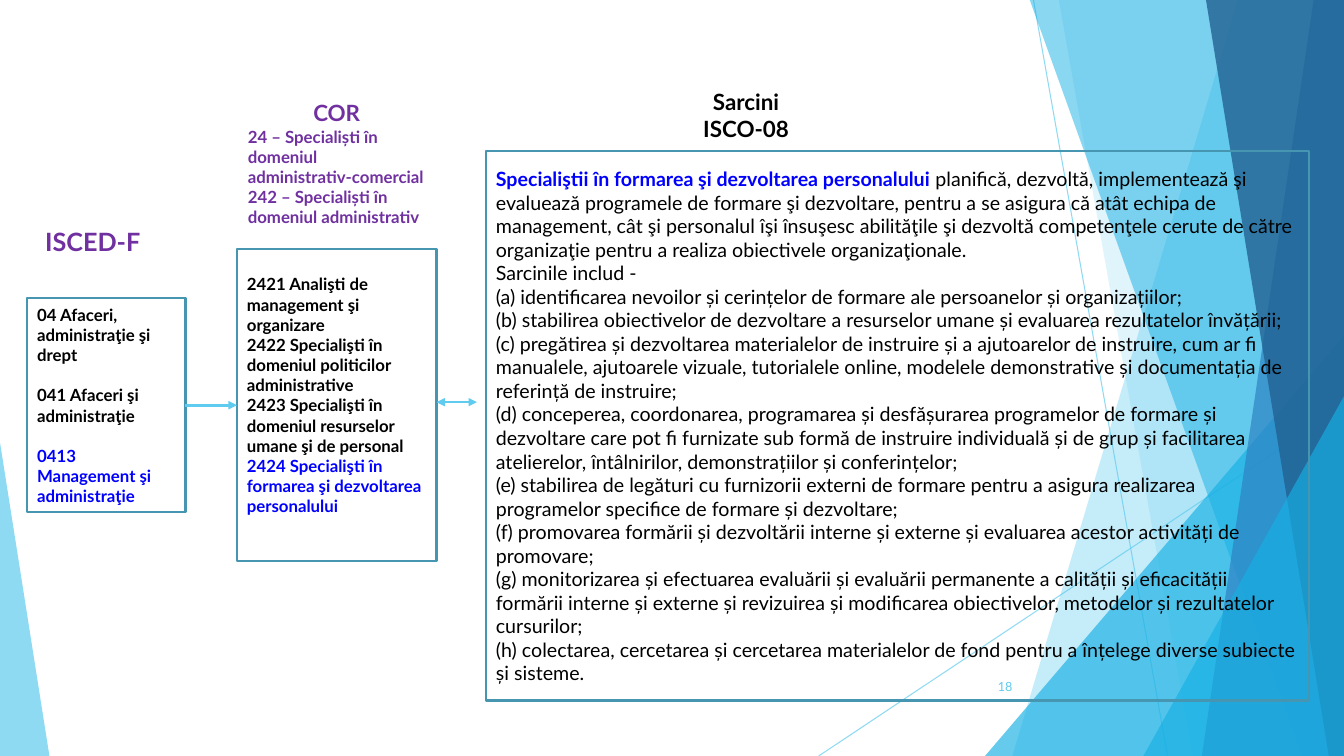
"""Build the slide that links ISCED-F fields, COR occupations and ISCO-08 tasks."""
from dataclasses import dataclass

from lxml import etree
from pptx import Presentation
from pptx import util as u
from pptx.dml.color import RGBColor
from pptx.enum import shapes, text
from pptx.oxml import ns

PX = u.Inches(1) // 100
WIDTH, HEIGHT = 1333, 750
RIGHT, MIDDLE, LEFT = 3, text.MSO_ANCHOR.MIDDLE, 1


@dataclass(frozen=True)
class Theme:
    """Colours, font and type sizes."""
    font: str = "Lato"
    ink: str = "000000"
    paper: str = "FFFFFF"
    purple: str = "7030A0"
    blue: str = "0000FF"
    border: str = "4696B1"
    sky: str = "5FCBEF"
    azure: str = "17B0E4"
    ocean: str = "2E83C3"
    navy: str = "226292"
    tiny: int = 9
    small: int = 12
    body: int = 14
    head: int = 16
    large: int = 18


THEME = Theme()

BANDS = [
    (1228, 1004, THEME.sky, 36),
    (1050, 1183, THEME.sky, 20),
    (1021, 1291, THEME.azure, 50),
    (1303, 1192, THEME.ocean, 70),
    (1196, 1318, THEME.navy, 80),
]
FIELDS = ["04 Afaceri, administraţie şi drept", "041 Afaceri şi administraţie"]
FIELD_CHOSEN = "0413 Management şi administraţie"
JOBS = [
    "2421 Analişti de management şi organizare",
    "2422 Specialişti în domeniul politicilor administrative",
    "2423 Specialişti în domeniul resurselor umane şi de personal",
]
JOB_CHOSEN = "2424 Specialişti în formarea şi dezvoltarea personalului"
COR_GROUPS = [
    "24 – Specialiști în domeniul administrativ-comercial",
    "242 – Specialiști în domeniul administrativ",
]
TASK_LEAD = "Specialiştii în formarea şi dezvoltarea personalului"
TASK_INTRO = (
    " planifică, dezvoltă, implementează şi evaluează programele de formare şi dezvoltare, "
    "pentru a se asigura că atât echipa de management, cât şi personalul îşi însuşesc "
    "abilităţile şi dezvoltă competenţele cerute de către organizaţie pentru a realiza "
    "obiectivele organizaţionale."
)
TASKS = [
    "Sarcinile includ -",
    "(a) identificarea nevoilor și cerințelor de formare ale persoanelor și organizațiilor;",
    "(b) stabilirea obiectivelor de dezvoltare a resurselor umane și evaluarea rezultatelor "
    "învățării;",
    "(c) pregătirea și dezvoltarea materialelor de instruire și a ajutoarelor de instruire, "
    "cum ar fi manualele, ajutoarele vizuale, tutorialele online, modelele demonstrative și "
    "documentația de referință de instruire;",
    "(d) conceperea, coordonarea, programarea și desfășurarea programelor de formare și "
    "dezvoltare care pot fi furnizate sub formă de instruire individuală și de grup și "
    "facilitarea atelierelor, întâlnirilor, demonstrațiilor și conferințelor;",
    "(e) stabilirea de legături cu furnizorii externi de formare pentru a asigura realizarea "
    "programelor specifice de formare și dezvoltare;",
    "(f) promovarea formării și dezvoltării interne și externe și evaluarea acestor "
    "activități de promovare;",
    "(g) monitorizarea și efectuarea evaluării și evaluării permanente a calității și "
    "eficacității formării interne și externe și revizuirea și modificarea obiectivelor, "
    "metodelor și rezultatelor cursurilor;",
    "(h) colectarea, cercetarea și cercetarea materialelor de fond pentru a înțelege diverse "
    "subiecte și sisteme.",
]


def scaled(*lengths):
    """Turn px lengths into EMU."""
    return [length * PX for length in lengths]


def fade(shape, percent):
    """Make the colours of a shape partly transparent."""
    for color in shape._element.spPr.iter(ns.qn("a:srgbClr")):
        etree.SubElement(color, ns.qn("a:alpha"), val=str(percent * 1000))


def paint(shape, color, opacity=100):
    """Give a shape a plain fill without outline or shadow."""
    shape.shadow.inherit = False
    shape.fill.solid()
    shape.fill.fore_color.rgb = RGBColor.from_string(color)
    shape.line.fill.background()
    if opacity < 100:
        fade(shape, opacity)


def add_band(page, top_x, bottom_x, color, opacity):
    """Draw a slanted band that reaches the right edge of the page."""
    builder = page.shapes.build_freeform(top_x, -1, scale=PX)
    builder.add_line_segments([(WIDTH, -1), (WIDTH, HEIGHT), (bottom_x, HEIGHT)])
    paint(builder.convert_to_shape(), color, opacity)


def add_triangle(page, place, apex, color, opacity):
    """Draw a triangle with its apex at a share of its width."""
    triangle = page.shapes.add_shape(shapes.MSO_SHAPE.ISOSCELES_TRIANGLE, *scaled(*place))
    triangle.adjustments[0] = apex
    paint(triangle, color, opacity)


def add_line(page, start, end, width, heads=()):
    """Draw a straight line with optional arrowheads."""
    line = page.shapes.add_connector(shapes.MSO_CONNECTOR.STRAIGHT, *scaled(*start, *end))
    line.line.color.rgb = RGBColor.from_string(THEME.sky)
    line.line.width = u.Pt(width)
    outline = line.line._get_or_add_ln()
    for head in heads:
        etree.SubElement(outline, ns.qn(f"a:{head}"), type="triangle")
    etree.SubElement(line._element.spPr, ns.qn("a:effectLst"))
    return line


def add_panel(page, place, fill=None):
    """Add a rectangle, either filled or outlined."""
    panel = page.shapes.add_shape(shapes.MSO_SHAPE.RECTANGLE, *scaled(*place))
    if fill:
        paint(panel, fill)
    else:
        panel.shadow.inherit = False
        panel.fill.background()
        panel.line.color.rgb = RGBColor.from_string(THEME.border)
        panel.line.width = u.Pt(1.5)
    return panel


def add_span(para, words, *, size=THEME.small, color=THEME.ink, bold=True):
    """Add a formatted run of text to a paragraph."""
    span = para.add_run()
    span.text = words
    span.font.name = THEME.font
    span.font.size = u.Pt(size)
    span.font.bold = bold
    span.font.color.rgb = RGBColor.from_string(color)


def add_para(box, words, *, align=text.PP_ALIGN.LEFT, before=0, **style):
    """Add a paragraph to a box, using its empty first one if possible."""
    frame = box.text_frame
    frame.word_wrap = True
    frame.vertical_anchor = MIDDLE
    para = frame.paragraphs[0]
    if para.runs:
        para = frame.add_paragraph()
        para.space_before = u.Pt(before)
    para.alignment = align
    add_span(para, words, **style)
    return para


def add_label(page, place, lines, **style):
    """Add a text box with one paragraph for each line."""
    box = page.shapes.add_textbox(*scaled(*place))
    for line in lines:
        add_para(box, line, **style)


def add_backdrop(page):
    """Draw the lines, bands and triangles at the page edges."""
    for start, end in [((1025, 0), (1158, HEIGHT)), ((WIDTH, 403), (812, HEIGHT))]:
        fade(add_line(page, start, end, 0.75), 70)
    for band in BANDS[:2]:
        add_band(page, *band)
    add_triangle(page, (977, 333, 356, 417), 1, THEME.azure, 66)
    for band in BANDS[2:]:
        add_band(page, *band)
    add_triangle(page, (1134, 393, 199, 357), 1, THEME.azure, 66)
    add_triangle(page, (0, 439, 49, 311), 0, THEME.sky, 70)


def main():
    """Build and save the deck."""
    deck = Presentation()
    deck.slide_width, deck.slide_height = scaled(WIDTH, HEIGHT)
    page = deck.slides.add_slide(deck.slide_layouts[6])
    center = text.PP_ALIGN.CENTER
    add_backdrop(page)
    add_label(page, (939, 661, 75, 40), ["18"], align=text.PP_ALIGN.RIGHT,
              size=THEME.tiny, color=THEME.sky, bold=False)

    fields = add_panel(page, (27, 296, 157, 212))
    for field in FIELDS:
        add_para(fields, field, before=14.4)
    add_para(fields, FIELD_CHOSEN, before=14.4, color=THEME.blue)

    tasks = add_panel(page, (482, 150, 816, 545))
    lead = add_para(tasks, TASK_LEAD, size=THEME.body, color=THEME.blue)
    add_span(lead, TASK_INTRO, size=THEME.body, bold=False)
    for task in TASKS:
        add_para(tasks, task, size=THEME.body, bold=False)

    jobs = add_panel(page, (235, 247, 198, 310))
    jobs.text_frame.margin_bottom = 25 * PX
    for job in JOBS:
        add_para(jobs, job)
    add_para(jobs, JOB_CHOSEN, color=THEME.blue)

    link = add_line(page, (184, 402), (235, 402), 0, ["tailEnd"])
    link.begin_connect(fields, RIGHT)
    link.end_connect(jobs, LEFT)
    add_label(page, (27, 210, 130, 59), ["ISCED-F"], align=center,
              size=THEME.large, color=THEME.purple)
    add_label(page, (642, 85, 196, 59), ["Sarcini", "ISCO-08"], align=center, size=THEME.head)
    add_line(page, (433, 399), (473, 399), 1, ["headEnd", "tailEnd"])

    groups = add_panel(page, (236, 89, 196, 146), THEME.paper)
    add_para(groups, "COR", align=center, size=THEME.head, color=THEME.purple)
    for group in COR_GROUPS:
        add_para(groups, group, color=THEME.purple)
    deck.save("out.pptx")


if __name__ == "__main__":
    main()
